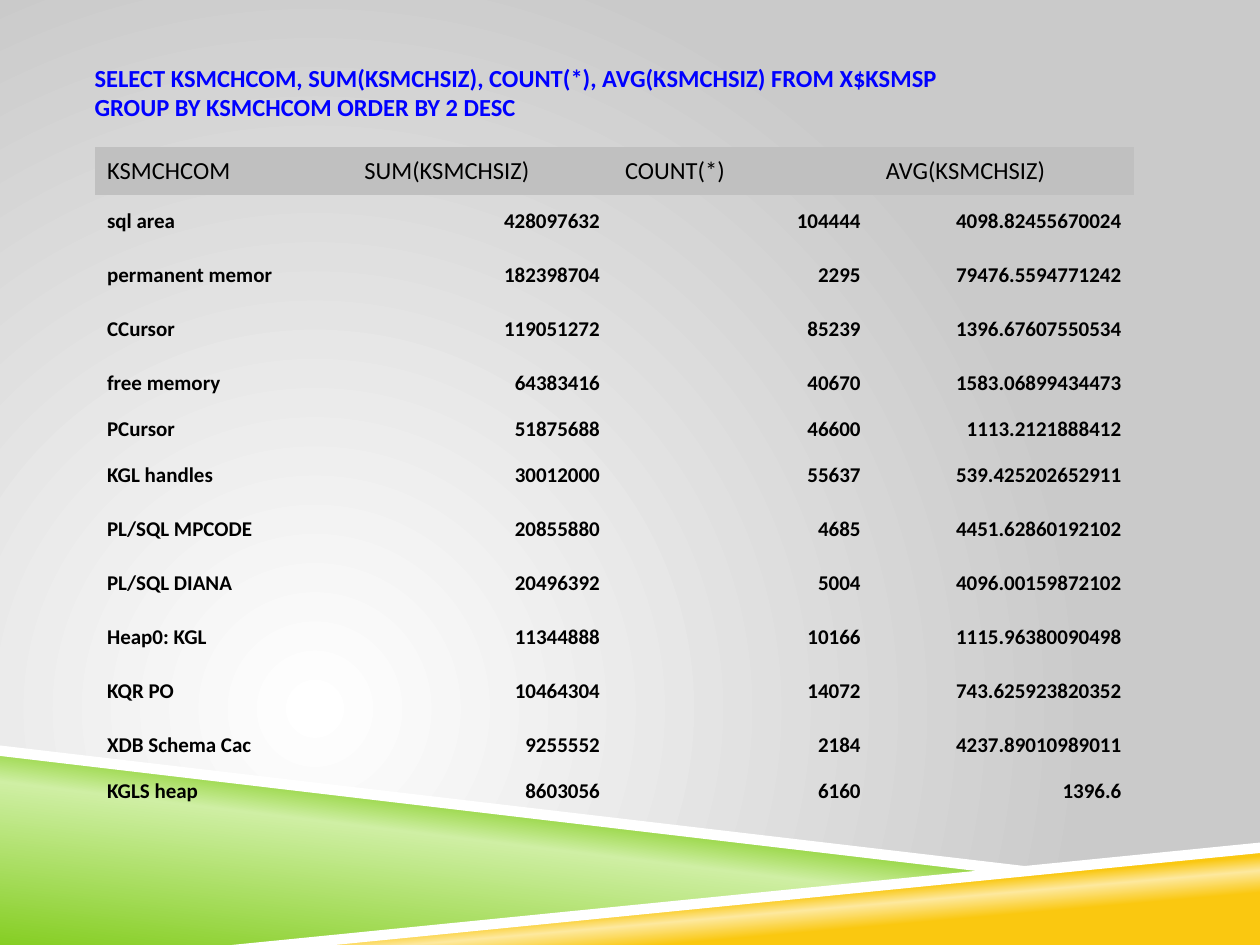
from pptx import Presentation
from pptx.dml.color import RGBColor
from pptx.enum.text import MSO_ANCHOR, MSO_AUTO_SIZE, PP_ALIGN
from pptx.oxml import parse_xml
from pptx.oxml.ns import nsdecls, qn
from pptx.util import Pt

NO_STYLE_NO_GRID = "{2D5ABB26-0587-4C30-8999-92F81FD0307C}"

QUERY = ("SELECT KSMCHCOM, SUM(KSMCHSIZ), COUNT(*), AVG(KSMCHSIZ) FROM X$KSMSP\n"
         "GROUP BY KSMCHCOM ORDER BY 2 DESC")

HEADER = ("KSMCHCOM", "SUM(KSMCHSIZ)", "COUNT(*)", "AVG(KSMCHSIZ)")
ROWS = [
    ("sql area", "428097632", "104444", "4098.82455670024"),
    ("permanent memor", "182398704", "2295", "79476.5594771242"),
    ("CCursor", "119051272", "85239", "1396.67607550534"),
    ("free memory", "64383416", "40670", "1583.06899434473"),
    ("PCursor", "51875688", "46600", "1113.2121888412"),
    ("KGL handles", "30012000", "55637", "539.425202652911"),
    ("PL/SQL MPCODE", "20855880", "4685", "4451.62860192102"),
    ("PL/SQL DIANA", "20496392", "5004", "4096.00159872102"),
    ("Heap0: KGL", "11344888", "10166", "1115.96380090498"),
    ("KQR PO", "10464304", "14072", "743.625923820352"),
    ("XDB Schema Cac", "9255552", "2184", "4237.89010989011"),
    ("KGLS heap", "8603056", "6160", "1396.6"),
]
SHORT_ROWS = ("PCursor", "KGLS heap")


def color(hex_string):
    return RGBColor.from_string(hex_string)


def gradient(stops, direction):
    """Return a gradFill element; direction is its a:lin or a:path child."""
    marks = "".join(f'<a:gs pos="{pos * 1000}"><a:srgbClr val="{c}"/></a:gs>'
                    for pos, c in stops)
    return parse_xml(f'<a:gradFill {nsdecls("a")} rotWithShape="1">'
                     f"<a:gsLst>{marks}</a:gsLst>{direction}</a:gradFill>")


def swap_solid_fill(element, new_fill):
    solid = element.find(".//" + qn("a:solidFill"))
    solid.getparent().replace(solid, new_fill)


class Deck:
    """Holds the text style and the current slide."""
    font = "Calibri"
    head_size, body_size = Pt(14), Pt(12)

    def __init__(self, prs):
        self.s = prs.slides.add_slide(prs.slide_layouts[5])

    def style(self, p, **values):
        for r in p.runs:
            r.font.color.rgb = color(values.get("color", "000000"))
            for name, value in {"name": self.font, "size": values["size"],
                                "bold": values.get("bold", False)}.items():
                setattr(r.font, name, value)

    def background(self, stops):
        """Fill the slide with a circle of light centred low on the left."""
        self.s.background.fill.solid()
        self.s.background.fill.fore_color.rgb = color("FFFFFF")
        swap_solid_fill(self.s.element.find(".//" + qn("p:bg")), gradient(
            stops, '<a:path path="circle"><a:fillToRect l="50000" t="100000" '
                   'r="100000" b="50000"/></a:path>'))

    def band(self, points, fill="FFFFFF", stops=None, angle=0):
        start, *rest = [(Pt(x), Pt(y)) for x, y in points]
        builder = self.s.shapes.build_freeform(*start)
        builder.add_line_segments(rest, close=True)
        sp = builder.convert_to_shape()
        sp.shadow.inherit = False
        sp.line.fill.background()
        sp.fill.solid()
        sp.fill.fore_color.rgb = color(fill)
        if stops:
            swap_solid_fill(sp.element, gradient(
                stops, f'<a:lin ang="{angle * 60000}" scaled="0"/>'))

    def title(self, text, left, top, width, height):
        sp = self.s.shapes.title
        sp.left, sp.top, sp.width, sp.height = map(Pt, (left, top, width, height))
        self.s.shapes.element.append(sp.element)  # in front of the bands
        tf = sp.text_frame
        for name, value in {"margin_left": 0, "margin_right": 0, "word_wrap": True,
                            "vertical_anchor": MSO_ANCHOR.MIDDLE,
                            "auto_size": MSO_AUTO_SIZE.NONE}.items():
            setattr(tf, name, value)
        p = tf.paragraphs[0]
        p.text = text
        p.alignment = PP_ALIGN.LEFT
        self.style(p, size=self.head_size, bold=True, color="0000FF")

    def cell(self, cell, text, is_header, is_number):
        cell.vertical_anchor = MSO_ANCHOR.MIDDLE
        p = cell.text_frame.paragraphs[0]
        p.text = text
        p.alignment = PP_ALIGN.RIGHT if is_number else PP_ALIGN.LEFT
        if is_header:
            cell.fill.solid()
            cell.fill.fore_color.rgb = color("C0C0C0")
            self.style(p, size=self.head_size)
        else:
            cell.fill.background()
            self.style(p, size=self.body_size, bold=True)

    def table(self, rows, left, top, widths, heights):
        frame = self.s.shapes.add_table(len(rows), len(widths), Pt(left), Pt(top),
                                        Pt(sum(widths)), Pt(sum(heights)))
        frame.element.find(".//" + qn("a:tableStyleId")).text = NO_STYLE_NO_GRID
        table = frame.table
        table.first_row = table.horz_banding = False
        for column, width in zip(table.columns, widths):
            column.width = Pt(width)
        for i, (row, height) in enumerate(zip(rows, heights)):
            table.rows[i].height = Pt(height)
            for j, text in enumerate(row):
                self.cell(table.cell(i, j), text, i == 0, i > 0 and j > 0)


def main():
    prs = Presentation()
    prs.slide_width, prs.slide_height = Pt(720), Pt(540)
    deck = Deck(prs)
    deck.background([(0, "FFFFFF"), (100, "CACACA")])

    deck.band([(0, 430), (570, 498), (144, 540), (0, 540)], angle=277,
              stops=[(0, "86CE24"), (52, "CFEFA4"), (66, "86CE24")])
    deck.band([(142.5, 540), (720, 484), (720, 540)], angle=265,
              stops=[(28, "FAC810"), (40, "FDE99F"), (48, "FAC810")])
    deck.band([(0, 426), (0, 432), (569, 499), (599, 496.5)])
    deck.band([(720, 481.5), (132.5, 540), (191.5, 540), (720, 487.5)])

    deck.title(QUERY, 54, 21.6, 612, 62.4)
    heights = [27.4] + [21.6 if row[0] in SHORT_ROWS else 30.8 for row in ROWS]
    deck.table([HEADER] + ROWS, 54, 84, [147] + [149] * 3, heights)
    prs.save("out.pptx")


if __name__ == "__main__":
    main()
